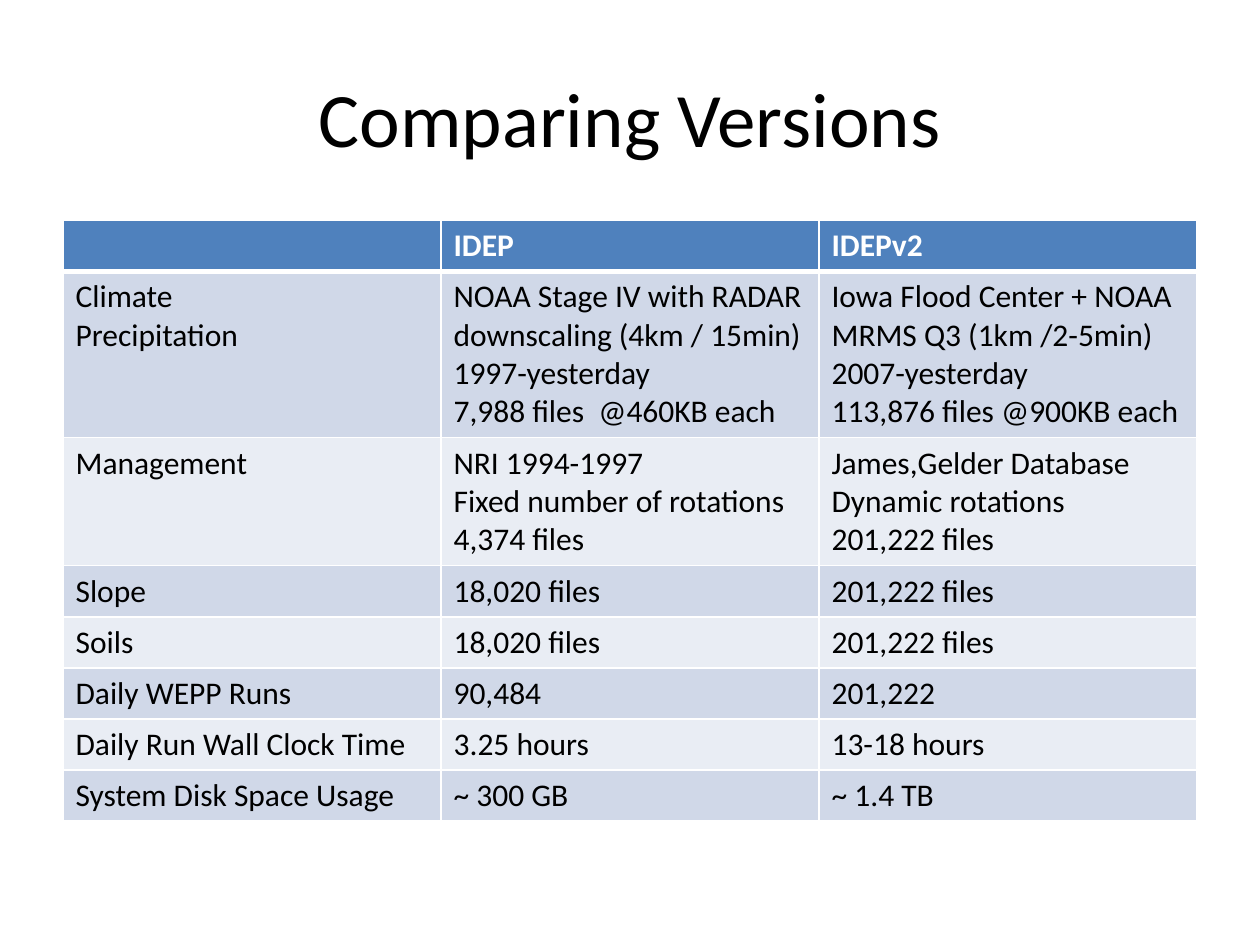
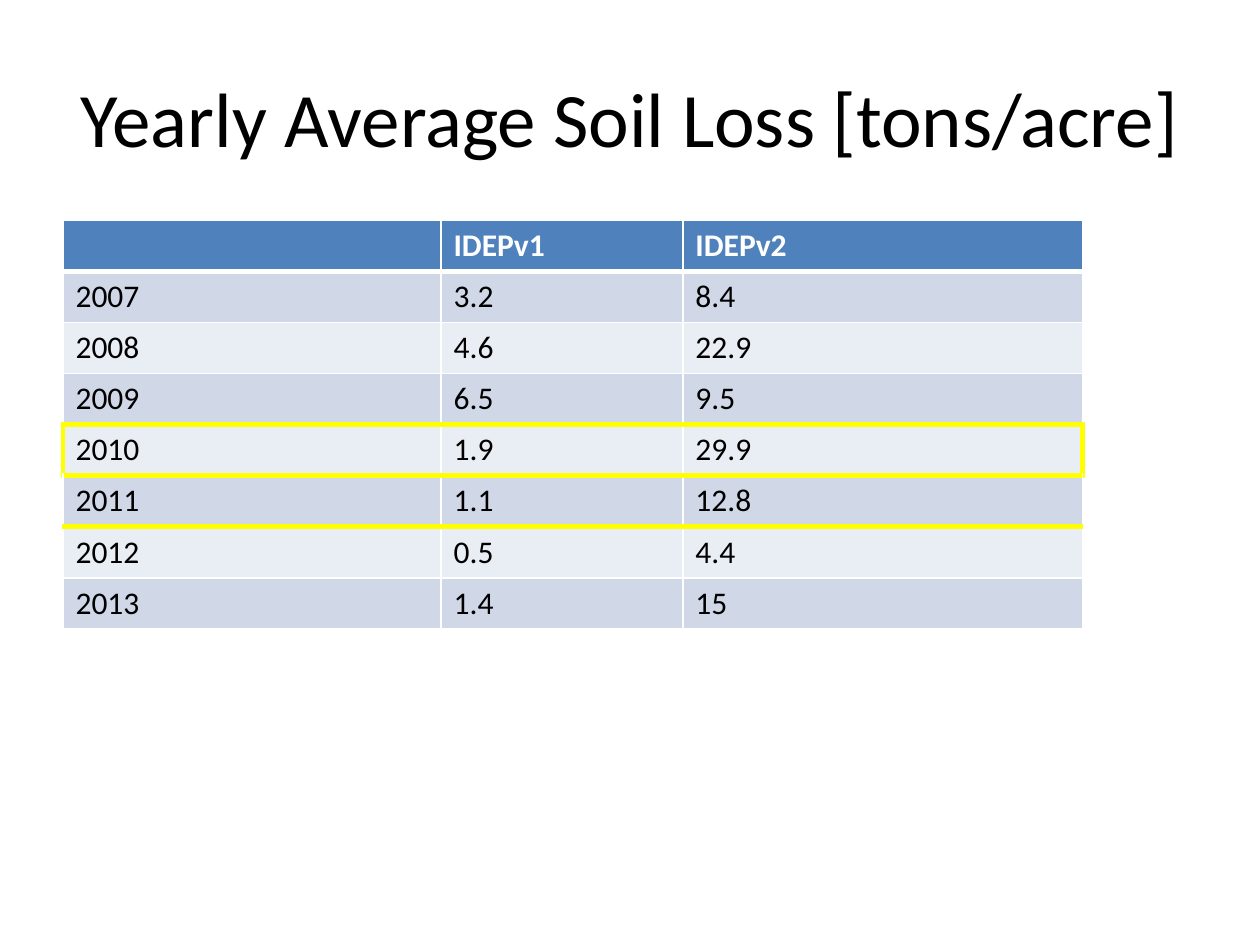
import lxml.etree
import pptx
import pptx.dml.color
import pptx.enum.text
import pptx.oxml.ns
import pptx.util

FONT = "Calibri"
HEADER, BANDS = "4F81BD", ("E9EDF4", "D0D8E8")
WHITE, BLACK, YELLOW = "FFFFFF", "000000", "FFFF00"
THIN, THICK = 1, 3


def color(value):
    return pptx.dml.color.RGBColor.from_string(value)


def add_border(cell, side, value, points):
    properties = cell._tc.get_or_add_tcPr()
    line = lxml.etree.SubElement(properties, pptx.oxml.ns.qn(f"a:ln{side}"))
    line.set("w", str(pptx.util.Pt(points)))
    fill = lxml.etree.SubElement(line, pptx.oxml.ns.qn("a:solidFill"))
    lxml.etree.SubElement(fill, pptx.oxml.ns.qn("a:srgbClr")).set("val", value)


presentation = pptx.Presentation()
presentation.slide_width = pptx.util.Inches(10)
presentation.slide_height = pptx.util.Inches(7.5)
width, height = presentation.slide_width, presentation.slide_height
margin = int(width * 0.05)
content_width = width - 2 * margin
row_height = height * 0.054

version_rows = [
    ["", "IDEP", "IDEPv2"],
    [
        "Climate\nPrecipitation",
        "NOAA Stage IV with RADAR downscaling (4km / 15min)\n1997-yesterday\n7,988 files  @460KB each",
        "Iowa Flood Center + NOAA MRMS Q3 (1km /2-5min)\n2007-yesterday\n113,876 files @900KB each",
    ],
    [
        "Management",
        "NRI 1994-1997\nFixed number of rotations\n4,374 files",
        "James,Gelder Database\nDynamic rotations\n201,222 files",
    ],
    ["Slope", "18,020 files", "201,222 files"],
    ["Soils", "18,020 files", "201,222 files"],
    ["Daily WEPP Runs", "90,484", "201,222"],
    ["Daily Run Wall Clock Time", "3.25 hours", "13-18 hours"],
    ["System Disk Space Usage", "~ 300 GB", "~ 1.4 TB"],
]
soil_loss_rows = [
    ["", "IDEPv1", "IDEPv2"],
    ["2007", "3.2", "8.4"],
    ["2008", "4.6", "22.9"],
    ["2009", "6.5", "9.5"],
    ["2010", "1.9", "29.9"],
    ["2011", "1.1", "12.8"],
    ["2012", "0.5", "4.4"],
    ["2013", "1.4", "15"],
]

slides = [
    ("Comparing Versions", version_rows, (0.3, 0.3, 0.3), 0.632, None, ()),
    (
        "Yearly Average Soil Loss [tons/acre]",
        soil_loss_rows,
        (0.3, 0.192, 0.317),
        0.432,
        "2010",
        ("2009", "2010", "2011"),
    ),
]

for title_text, rows, column_shares, table_share, boxed_row, underlined_rows in slides:
    slide = presentation.slides.add_slide(presentation.slide_layouts[5])
    title = slide.shapes.title
    title.left, title.top = margin, int(height * 0.04)
    title.width, title.height = content_width, int(height / 6)
    title.text_frame.text = title_text
    title.text_frame.vertical_anchor = pptx.enum.text.MSO_ANCHOR.MIDDLE
    paragraph = title.text_frame.paragraphs[0]
    paragraph.alignment = pptx.enum.text.PP_ALIGN.CENTER
    paragraph.font.name = FONT
    paragraph.font.size = pptx.util.Pt(44)
    paragraph.font.color.rgb = color(BLACK)

    frame = slide.shapes.add_table(
        len(rows),
        len(column_shares),
        margin,
        int(height * 0.233),
        int(width * sum(column_shares)),
        int(row_height * len(rows)),
    )
    frame.height = int(height * table_share)
    table = frame.table
    for column, share in zip(table.columns, column_shares):
        column.width = int(width * share)

    last_column = len(column_shares) - 1
    for row_index, row in enumerate(rows):
        is_header = row_index == 0
        row_above = rows[row_index - 1][0]
        for column_index, text in enumerate(row):
            cell = table.cell(row_index, column_index)
            yellow_sides = {
                "L": row[0] == boxed_row and column_index == 0,
                "R": row[0] == boxed_row and column_index == last_column,
                "T": row_above in underlined_rows,
                "B": row[0] in underlined_rows,
            }
            for side, is_yellow in yellow_sides.items():
                under_header = (side == "B" and is_header) or (side == "T" and row_index == 1)
                points = THICK if is_yellow or under_header else THIN
                add_border(cell, side, YELLOW if is_yellow else WHITE, points)
            cell.fill.solid()
            cell.fill.fore_color.rgb = color(HEADER if is_header else BANDS[row_index % 2])
            cell.text_frame.text = text
            for paragraph in cell.text_frame.paragraphs:
                paragraph.font.name = FONT
                paragraph.font.size = pptx.util.Pt(18)
                paragraph.font.bold = is_header
                paragraph.font.color.rgb = color(WHITE if is_header else BLACK)

presentation.save("out.pptx")
